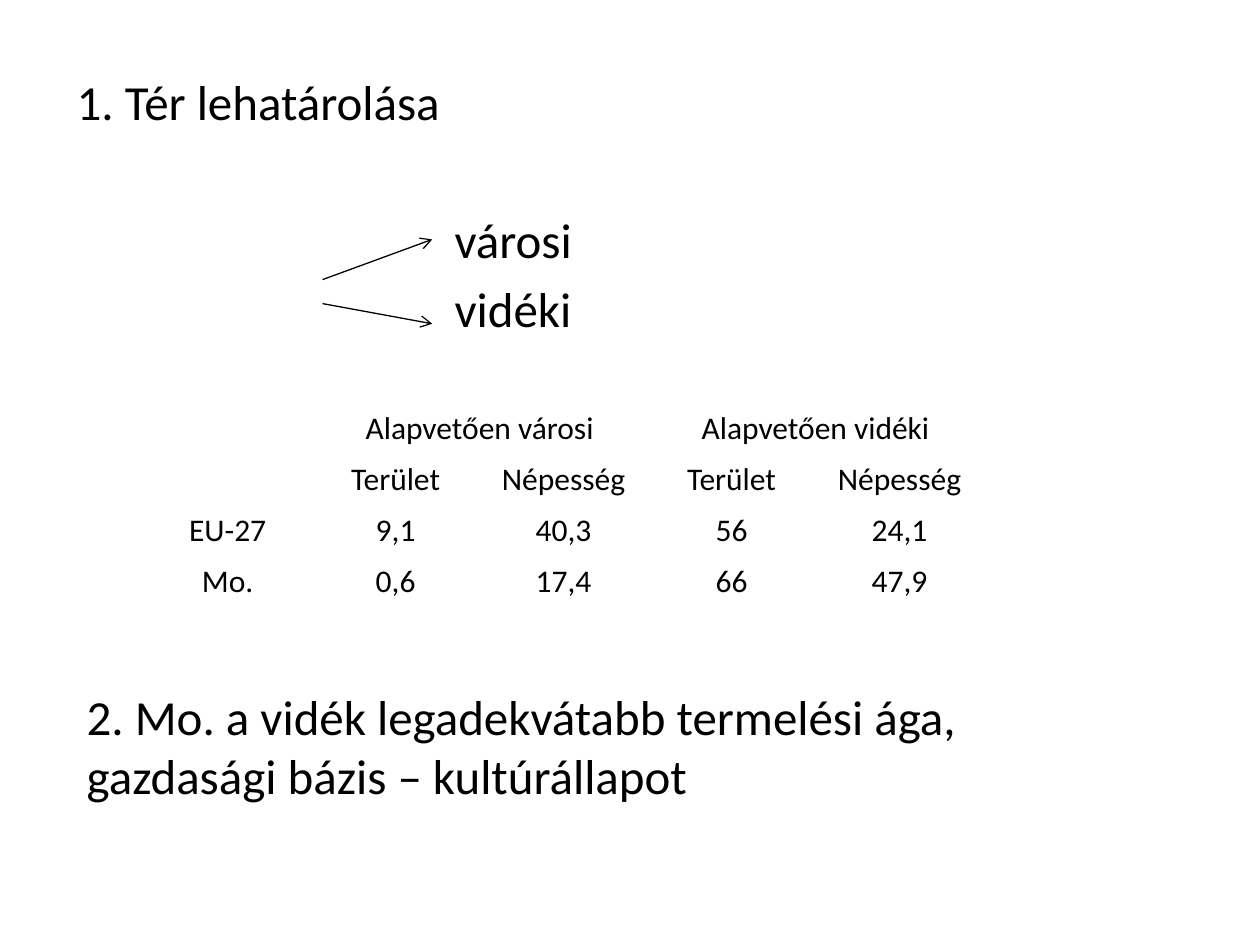
import dataclasses

import lxml.etree
import pptx
import pptx.dml.color
import pptx.enum.shapes
import pptx.enum.text
import pptx.oxml.ns
import pptx.slide
import pptx.text.text
import pptx.util

Pt = pptx.util.Pt
FONT = "Calibri"
BLACK = "000000"
BODY_SIZE = 28
CELL_SIZE = 18
COLUMN_WIDTH = 96
ROW_HEIGHT = 29.2


@dataclasses.dataclass(frozen=True)
class Line:
    text: str
    indent: float = 0
    space_before: float = 0


@dataclasses.dataclass(frozen=True)
class TextBlock:
    left: float
    top: float
    width: float
    height: float
    lines: tuple[Line, ...]


@dataclasses.dataclass(frozen=True)
class Arrow:
    start: tuple[float, float]
    end: tuple[float, float]


TEXT_BLOCKS = (
    TextBlock(36.7, 37.4, 648, 158.4, (
        Line("1. Tér lehatárolása", space_before=5.6),
        Line("városi", indent=216, space_before=45.4),
        Line("vidéki", indent=216, space_before=5.6),
    )),
    TextBlock(42.5, 388.8, 623.5, 74.9, (
        Line("2. Mo. a vidék legadekvátabb termelési ága, "
             "gazdasági bázis – kultúrállapot"),
    )),
)
ARROWS = (
    Arrow((184.3, 159.8), (247, 136.8)),
    Arrow((184.3, 173.5), (247, 185)),
)
TABLE_ROWS = (
    ("", "Alapvetően városi", "", "Alapvetően vidéki", ""),
    ("", "Terület", "Népesség", "Terület", "Népesség"),
    ("EU-27", "9,1", "40,3", "56", "24,1"),
    ("Mo.", "0,6", "17,4", "66", "47,9"),
)
MERGED_HEADER_COLUMNS = (1, 3)


def colour(value: str) -> pptx.dml.color.RGBColor:
    return pptx.dml.color.RGBColor.from_string(value)


def add_span(para: pptx.text.text._Paragraph, text: str, size: float) -> None:
    span = para.add_run()
    span.text = text
    span.font.name = FONT
    span.font.size = Pt(size)
    span.font.color.rgb = colour(BLACK)


def add_text_block(page: pptx.slide.Slide, block: TextBlock) -> None:
    box = page.shapes.add_textbox(
        Pt(block.left), Pt(block.top), Pt(block.width), Pt(block.height))
    frame = box.text_frame
    frame.word_wrap = True
    for index, line in enumerate(block.lines):
        para = frame.add_paragraph() if index else frame.paragraphs[0]
        para.space_before = Pt(line.space_before)
        if line.indent:
            para._p.get_or_add_pPr().set("marL", str(Pt(line.indent)))
        add_span(para, line.text, BODY_SIZE)


def add_arrow(page: pptx.slide.Slide, arrow: Arrow) -> None:
    """Draw a thin line with an open arrowhead and no shadow."""
    connector = page.shapes.add_connector(
        pptx.enum.shapes.MSO_CONNECTOR.STRAIGHT,
        *map(Pt, arrow.start + arrow.end))
    connector.line.color.rgb = colour(BLACK)
    connector.line.width = Pt(0.75)
    qualified = pptx.oxml.ns.qn
    outline = connector.line._get_or_add_ln()
    lxml.etree.SubElement(outline, qualified("a:tailEnd"), type="arrow")
    lxml.etree.SubElement(connector._element.spPr, qualified("a:effectLst"))


def add_area_table(page: pptx.slide.Slide, left: float, top: float) -> None:
    row_count, column_count = len(TABLE_ROWS), len(TABLE_ROWS[0])
    table = page.shapes.add_table(
        row_count, column_count, Pt(left), Pt(top),
        Pt(column_count * COLUMN_WIDTH), Pt(row_count * ROW_HEIGHT)).table
    table.first_row = False
    table.horz_banding = False
    for row_index, texts in enumerate(TABLE_ROWS):
        for column_index, text in enumerate(texts):
            cell = table.cell(row_index, column_index)
            cell.fill.background()
            para = cell.text_frame.paragraphs[0]
            para.alignment = pptx.enum.text.PP_ALIGN.CENTER
            if text:
                add_span(para, text, CELL_SIZE)
    for column_index in MERGED_HEADER_COLUMNS:
        table.cell(0, column_index).merge(table.cell(0, column_index + 1))


def main() -> None:
    deck = pptx.Presentation()
    deck.slide_width, deck.slide_height = Pt(720), Pt(540)
    page = deck.slides.add_slide(deck.slide_layouts[6])
    for block in TEXT_BLOCKS:
        add_text_block(page, block)
    for arrow in ARROWS:
        add_arrow(page, arrow)
    add_area_table(page, left=82.1, top=230.4)
    deck.save("out.pptx")


if __name__ == "__main__":
    main()
